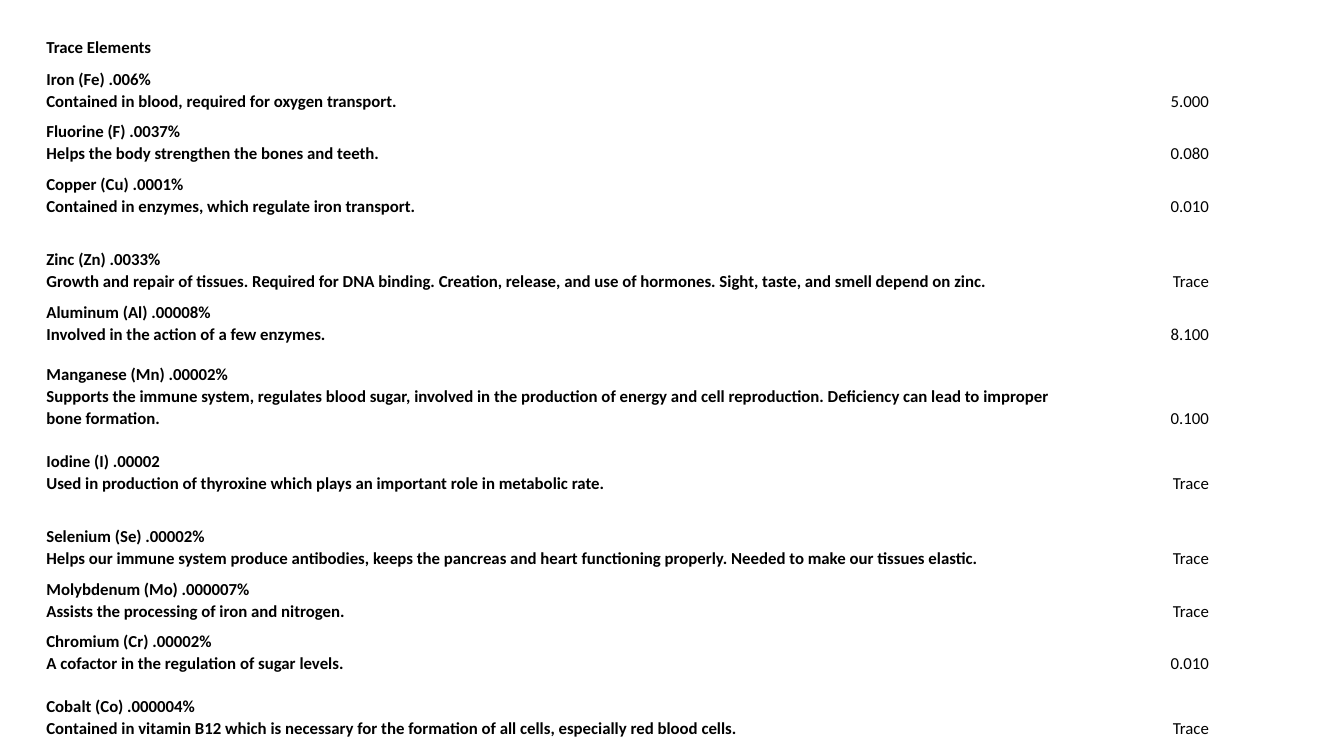
from copy import deepcopy
from lxml.etree import SubElement as Sub
from pptx import Presentation
from pptx.dml.color import RGBColor as Rgb
from pptx.enum.text import MSO_ANCHOR as Anchor, PP_ALIGN as Align
from pptx.oxml.ns import qn
from pptx.util import Inches, Pt

HEAD = "Trace Elements"
# name and share, role in the body, amount, row height
ITEMS = [
    ("Iron (Fe) .006%", "Contained in blood, required for oxygen transport.", "5.000", 0.53),
    ("Fluorine (F) .0037%", "Helps the body strengthen the bones and teeth.", "0.080", 0.52),
    ("Copper (Cu) .0001%", "Contained in enzymes, which regulate iron transport.", "0.010", 0.52),
    ("Zinc (Zn) .0033%",
     "Growth and repair of tissues. Required for DNA binding. Creation, release, "
     "and use of hormones. Sight, taste, and smell depend on zinc.", "Trace", 0.75),
    ("Aluminum (Al) .00008%", "Involved in the action of a few enzymes.", "8.100", 0.52),
    ("Manganese (Mn) .00002%",
     "Supports the immune system, regulates blood sugar, involved in the production "
     "of energy and cell reproduction. Deficiency can lead to improper bone formation.",
     "0.100", 0.84),
    ("Iodine (I) .00002",
     "Used in production of thyroxine which plays an important role in metabolic rate.",
     "Trace", 0.64),
    ("Selenium (Se) .00002%",
     "Helps our immune system produce antibodies, keeps the pancreas and heart "
     "functioning properly. Needed to make our tissues elastic.", "Trace", 0.75),
    ("Molybdenum (Mo) .000007%", "Assists the processing of iron and nitrogen.", "Trace", 0.52),
    ("Chromium (Cr) .00002%", "A cofactor in the regulation of sugar levels.", "0.010", 0.52),
    ("Cobalt (Co) .000004%",
     "Contained in vitamin B12 which is necessary for the formation of all cells, "
     "especially red blood cells.", "Trace", 0.64),
]
COLORS = {"paper": "FFFFFF", "ink": "000000"}
LEFT, TOP = 0.39, 0.32
COLS = (10.17, 1.5)
HEAD_H = 0.3
SIZE = 12


def put(cell, *lines, bold=True, align=Align.LEFT, after=0):
    """Write lines into one paragraph, parted by line breaks."""
    para = cell.text_frame.paragraphs[0]
    para.alignment, para.line_spacing = align, 1.07
    if after:
        para.space_after = Pt(after)
    for i, line in enumerate(lines):
        if i:
            para.add_line_break()
        run = para.add_run()
        run.text = line
        font = run.font
        font.name, font.size, font.bold = "Calibri", Pt(SIZE), bold
        font.color.rgb = Rgb.from_string(COLORS["ink"])
    for brk in para._p.findall(qn("a:br")):
        brk.append(deepcopy(para.runs[0]._r.rPr))
    if not lines:  # keeps an empty cell from growing its row
        Sub(para._p, qn("a:endParaRPr"), sz=str(SIZE * 100))


def edge(cell, **widths):
    """Draw the four borders, 1 pt wide unless a side is given."""
    props = cell._tc.get_or_add_tcPr()
    for i, side in enumerate("LRTB"):
        line = Sub(props, qn(f"a:ln{side}"), w=str(Pt(widths.get(side, 1))))
        fill = Sub(line, qn("a:solidFill"))
        Sub(fill, qn("a:srgbClr"), val=COLORS["paper"])
        props.insert(i, line)


def style(cell, **widths):
    cell.margin_left = cell.margin_right = Inches(0.07)
    cell.margin_top = cell.margin_bottom = Inches(0.04)
    cell.vertical_anchor = Anchor.BOTTOM
    cell.fill.solid()
    cell.fill.fore_color.rgb = Rgb.from_string(COLORS["paper"])
    edge(cell, **widths)


def main():
    prs = Presentation()
    prs.slide_width, prs.slide_height = Inches(13.33), Inches(7.5)
    slide = prs.slides.add_slide(prs.slide_layouts[6])
    highs = [HEAD_H] + [item[-1] for item in ITEMS]
    table = slide.shapes.add_table(
        len(highs), len(COLS), Inches(LEFT), Inches(TOP),
        Inches(sum(COLS)), Inches(sum(highs))).table
    for col, wide in zip(table.columns, COLS):
        col.width = Inches(wide)
    for i, (row, high) in enumerate(zip(table.rows, highs)):
        row.height = Inches(high)
        widths = {0: {"B": 3}, 1: {"T": 3}}.get(i, {})
        for cell in row.cells:
            style(cell, **widths)

    put(table.cell(0, 0), HEAD)
    put(table.cell(0, 1))
    for i, (name, role, amount, _) in enumerate(ITEMS, 1):
        put(table.cell(i, 0), name, role)
        put(table.cell(i, 1), amount, bold=False, align=Align.RIGHT,
            after=12 if amount == "Trace" else 0)
    prs.save("out.pptx")


if __name__ == "__main__":
    main()
